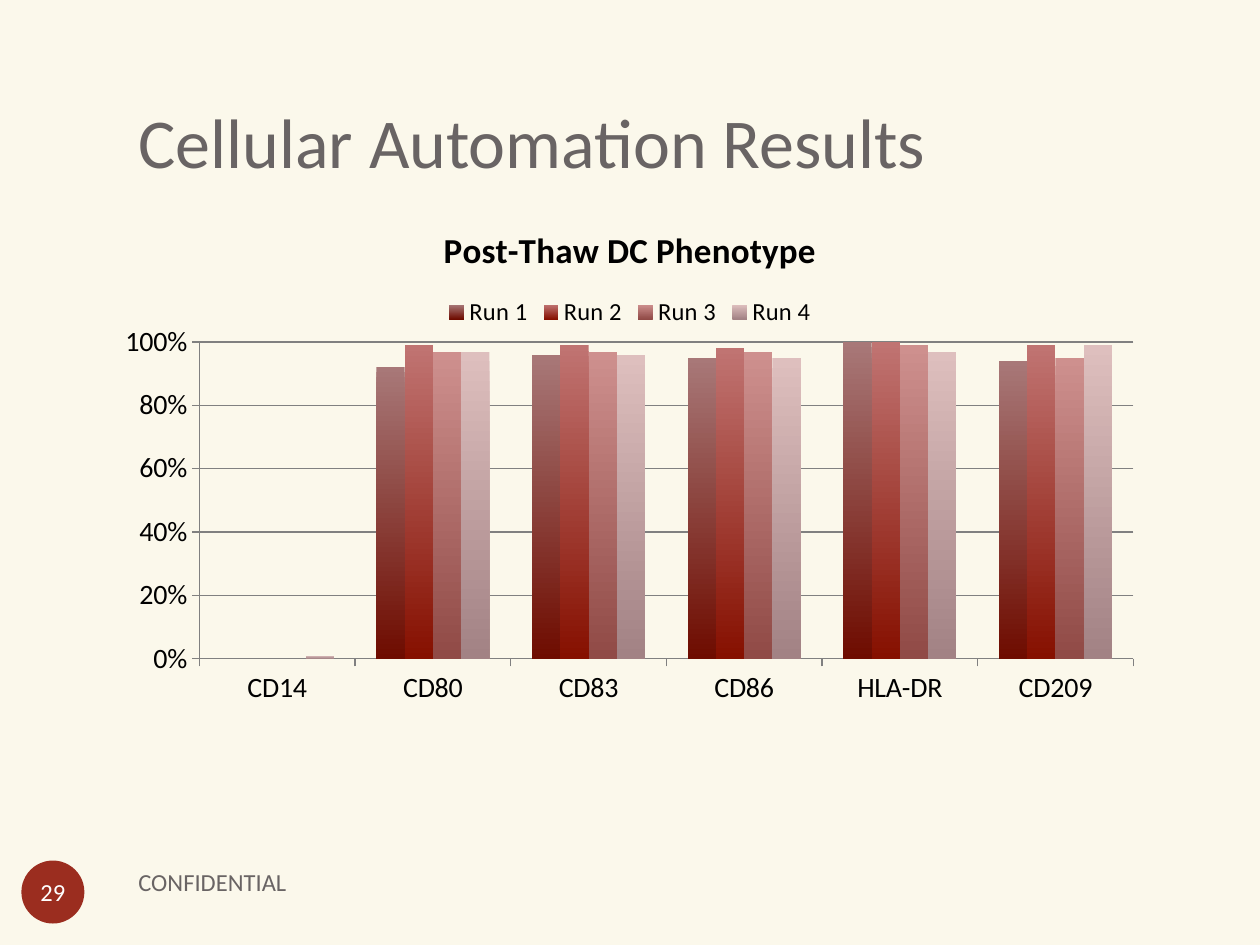
"""Build the post-thaw phenotype slide."""
from typing import NamedTuple

from lxml import etree
from pptx import Presentation
from pptx import util as u
from pptx.chart.data import CategoryChartData
from pptx.dml.color import RGBColor
from pptx.enum import chart as ch
from pptx.enum import shapes, text

PX = 9144
FONT = "Calibri"
CREAM = RGBColor(0xFB, 0xF8, 0xEB)
GREY = RGBColor(0x69, 0x64, 0x64)
RUST = RGBColor(0x9B, 0x2D, 0x1F)
WHITE = RGBColor(0xFF, 0xFF, 0xFF)
BLACK = RGBColor(0, 0, 0)
RULE = RGBColor(0x80, 0x80, 0x80)
CATS = ("CD14", "CD80", "CD83", "CD86", "HLA-DR", "CD209")
PLOT = {"x": 0.098, "y": 0.227, "w": 0.872, "h": 0.503}


class Box(NamedTuple):
    left: int
    top: int
    width: int
    height: int

    def emu(self) -> list[int]:
        return [v * PX for v in self]


class Run(NamedTuple):
    name: str
    vals: tuple[float, ...]
    light: RGBColor
    dark: RGBColor


RUNS = (
    Run("Run 1", (0, 0.92, 0.96, 0.95, 1, 0.94),
        RGBColor(0xA8, 0x78, 0x78), RGBColor(0x6E, 0x0C, 0x00)),
    Run("Run 2", (0, 0.99, 0.99, 0.98, 1, 0.99),
        RGBColor(0xC0, 0x74, 0x72), RGBColor(0x86, 0x10, 0x00)),
    Run("Run 3", (0, 0.97, 0.97, 0.97, 0.99, 0.95),
        RGBColor(0xCE, 0x90, 0x8E), RGBColor(0x90, 0x4A, 0x46)),
    Run("Run 4", (0.01, 0.97, 0.96, 0.95, 0.97, 0.99),
        RGBColor(0xDE, 0xBF, 0xBE), RGBColor(0xA2, 0x82, 0x84)),
)


def style(font, size: int, color: RGBColor, bold: bool = False) -> None:
    """Set the face, size, colour and weight of a font."""
    font.name, font.size, font.bold = FONT, u.Pt(size), bold
    font.color.rgb = color


def write(shape, words: str, size: int, color: RGBColor, anchor, align) -> None:
    """Fill a shape with one formatted paragraph."""
    frame = shape.text_frame
    frame.text = words
    frame.word_wrap = True
    frame.auto_size = text.MSO_AUTO_SIZE.NONE
    frame.vertical_anchor = anchor
    para = frame.paragraphs[0]
    para.alignment = align
    style(para.runs[0].font, size, color)


def head(slide, box: Box) -> None:
    """Place the slide title."""
    title = slide.shapes.title
    title.left, title.top, title.width, title.height = box.emu()
    write(title, "Cellular Automation Results", 40, GREY,
          text.MSO_ANCHOR.BOTTOM, text.PP_ALIGN.LEFT)
    title.text_frame.margin_bottom = 10 * PX


def foot(slide, box: Box, disc: Box) -> None:
    """Draw the footer label and the page number disc."""
    label = slide.shapes.add_textbox(*box.emu())
    write(label, "CONFIDENTIAL", 14, GREY,
          text.MSO_ANCHOR.MIDDLE, text.PP_ALIGN.LEFT)
    page = slide.shapes.add_shape(shapes.MSO_SHAPE.OVAL, *disc.emu())
    page.shadow.inherit = False
    page.fill.solid()
    page.fill.fore_color.rgb = RUST
    page.line.fill.background()
    write(page, "29", 14, WHITE,
          text.MSO_ANCHOR.MIDDLE, text.PP_ALIGN.CENTER)
    frame = page.text_frame
    frame.word_wrap = False
    frame.margin_left = frame.margin_right = 0
    frame.margin_top = frame.margin_bottom = 0


def place(chart) -> None:
    """Fix the inner plot area of a chart."""
    area = chart.plots[0]._element.getparent()
    ns = etree.QName(area).namespace
    for old in area.findall(f"{{{ns}}}layout"):
        area.remove(old)
    lay = etree.Element(f"{{{ns}}}layout")
    area.insert(0, lay)
    man = etree.SubElement(lay, f"{{{ns}}}manualLayout")
    rows = {"layoutTarget": "inner", "xMode": "edge", "yMode": "edge", **PLOT}
    for tag, val in rows.items():
        etree.SubElement(man, f"{{{ns}}}{tag}", val=str(val))


def graph(slide, box: Box) -> None:
    """Draw the clustered column chart of all runs."""
    data = CategoryChartData(number_format="0%")
    data.categories = CATS
    for run in RUNS:
        data.add_series(run.name, run.vals)
    chart = slide.shapes.add_chart(
        ch.XL_CHART_TYPE.COLUMN_CLUSTERED, *box.emu(), data).chart
    style(chart.font, 18, BLACK)
    chart.has_title = True
    frame = chart.chart_title.text_frame
    frame.text = "Post-Thaw DC Phenotype"
    style(frame.paragraphs[0].runs[0].font, 20, BLACK, True)
    chart.chart_title.include_in_layout = False
    chart.has_legend = True
    chart.legend.position = ch.XL_LEGEND_POSITION.TOP
    chart.legend.include_in_layout = False
    style(chart.legend.font, 14, BLACK)

    for axis in (chart.category_axis, chart.value_axis):
        style(axis.tick_labels.font, 16, BLACK)
        axis.major_tick_mark = ch.XL_TICK_MARK.OUTSIDE
        axis.format.line.color.rgb = RULE
        axis.format.line.width = u.Pt(0.75)
    axis = chart.value_axis
    axis.minimum_scale, axis.maximum_scale, axis.major_unit = 0, 1, 0.2
    axis.tick_labels.number_format = "0%"
    axis.tick_labels.number_format_is_linked = False
    axis.has_major_gridlines = True
    axis.major_gridlines.format.line.color.rgb = RULE
    axis.major_gridlines.format.line.width = u.Pt(0.75)

    plot = chart.plots[0]
    plot.vary_by_categories = False
    plot.gap_width, plot.overlap = 150, 0
    for bar, run in zip(plot.series, RUNS):
        fill = bar.format.fill
        fill.gradient()
        fill.gradient_angle = 270
        for stop, tone, pos in zip(fill.gradient_stops,
                                   (run.light, run.dark), (0, 1)):
            stop.color.rgb = tone
            stop.position = pos
        bar.format.line.fill.background()
    place(chart)


def main() -> None:
    """Build and save the slide."""
    deck = Presentation()
    deck.slide_width, deck.slide_height = 1000 * PX, 750 * PX
    slide = deck.slides.add_slide(deck.slide_layouts[5])
    slide.background.fill.solid()
    slide.background.fill.fore_color.rgb = CREAM
    head(slide, Box(100, 30, 850, 125))
    foot(slide, Box(100, 675, 433, 50), Box(17, 683, 50, 50))
    graph(slide, Box(75, 158, 850, 500))
    deck.save("out.pptx")


if __name__ == "__main__":
    main()
